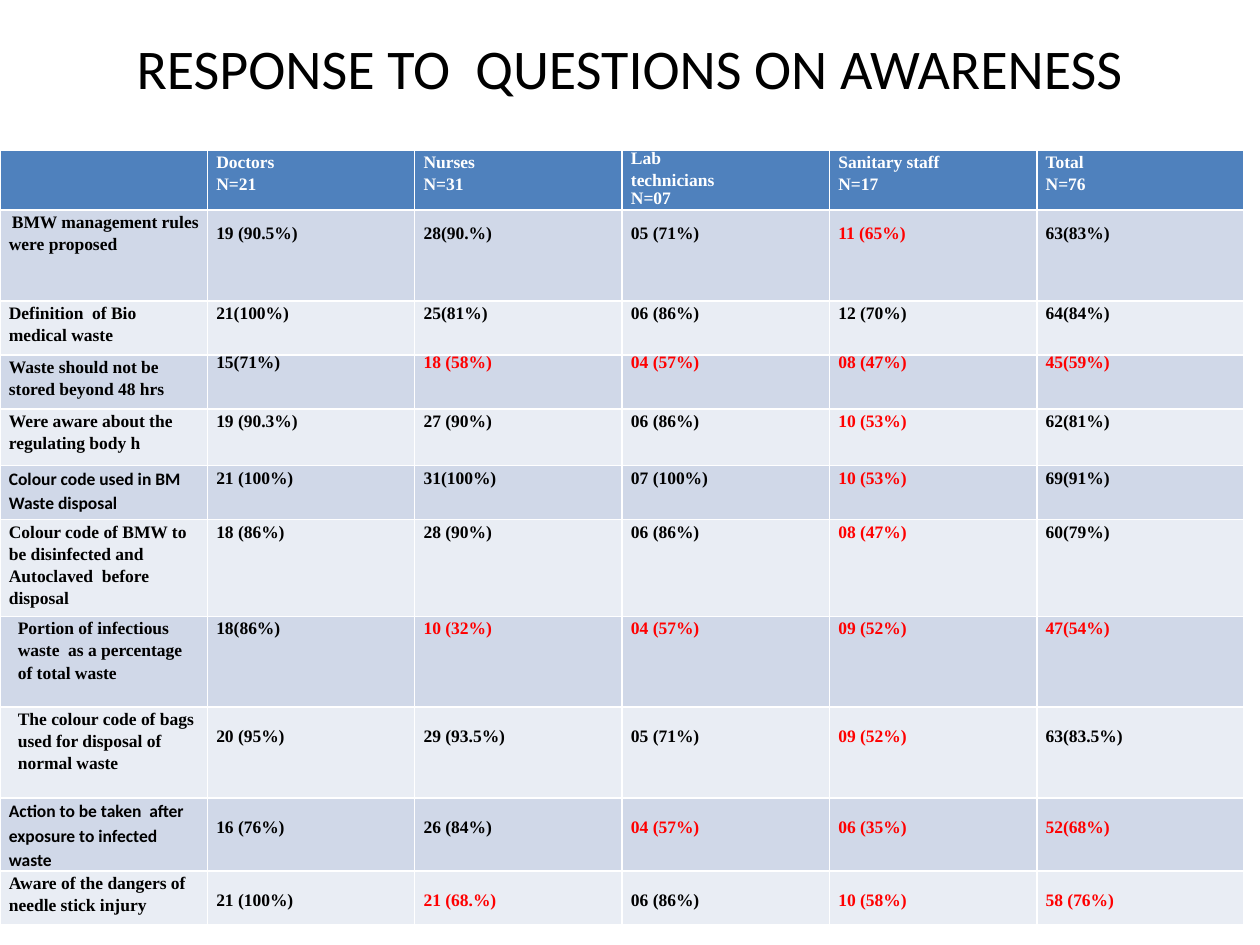
"""Build the slide with the table of responses to awareness questions."""
from pptx import Presentation
from pptx import util as u
from pptx.dml.color import RGBColor
from pptx.enum import text

BLACK = RGBColor(0x00, 0x00, 0x00)
WHITE = RGBColor(0xFF, 0xFF, 0xFF)
RED = RGBColor(0xFF, 0x00, 0x00)
HEADER_BLUE = RGBColor(0x4F, 0x81, 0xBD)
BANDS = [RGBColor(0xD0, 0xD8, 0xE8), RGBColor(0xE9, 0xED, 0xF4)]
SERIF, SANS = "Times New Roman", "Calibri"

HEADERS = [
    [],
    ["Doctors", "N=21"],
    ["Nurses", "N=31"],
    ["Lab", "technicians", "N=07"],
    ["Sanitary staff", "N=17"],
    ["Total", "N=76"],
]
LAB_SPACINGS = [u.Pt(10.1), 1.15, u.Pt(10.3)]

# question, answers, red columns, row height, answer top margin
ROWS = [
    ("BMW management rules were proposed",
     ["19 (90.5%)", "28(90.%)", "05 (71%)", "11 (65%)", "63(83%)"], [4], 1.83, 0.23),
    ("Definition  of Bio medical waste",
     ["21(100%)", "25(81%)", "06 (86%)", "12 (70%)", "64(84%)"], [], 1.09, 0),
    ("Waste should not be stored beyond 48 hrs",
     ["15(71%)", "18 (58%)", "04 (57%)", "08 (47%)", "45(59%)"], [2, 3, 4, 5], 1.09, 0),
    ("Were aware about the regulating body h",
     ["19 (90.3%)", "27 (90%)", "06 (86%)", "10 (53%)", "62(81%)"], [4], 1.14, 0),
    ("Colour code used in BM Waste disposal",
     ["21 (100%)", "31(100%)", "07 (100%)", "10 (53%)", "69(91%)"], [4], 1.09, 0),
    ("Colour code of BMW to be disinfected and Autoclaved  before  disposal",
     ["18 (86%)", "28 (90%)", "06 (86%)", "08 (47%)", "60(79%)"], [4], 1.83, 0),
    ("Portion of infectious waste  as a percentage of total waste",
     ["18(86%)", "10 (32%)", "04 (57%)", "09 (52%)", "47(54%)"], [2, 3, 4, 5], 1.83, 0),
    ("The colour code of bags used for disposal of normal waste",
     ["20 (95%)", "29 (93.5%)", "05 (71%)", "09 (52%)", "63(83.5%)"], [4], 1.83, 0.35),
    ("Action to be taken  after exposure to infected waste",
     ["16 (76%)", "26 (84%)", "04 (57%)", "06 (35%)", "52(68%)"], [3, 4, 5], 1.47, 0.35),
    ("Aware of the dangers of needle stick injury",
     ["21 (100%)", "21 (68.%)", "06 (86%)", "10 (58%)", "58 (76%)"], [2, 4, 5], 1.09, 0.35),
]
FIRST_LINE_ROW, TIGHT_ROW = 1, 3
SANS_ROWS, INDENTED_ROWS = [5, 9], [7, 8]


def add_span(para, words, font, size, colour, bold):
    span = para.add_run()
    span.text = words
    span.font.name = font
    span.font.size = u.Pt(size)
    span.font.bold = bold
    span.font.color.rgb = colour


def fill_cell(cell, lines, fill, colour, spacings, font=SERIF, left=0.18, top=0):
    cell.fill.solid()
    cell.fill.fore_color.rgb = fill
    cell.margin_left, cell.margin_right = u.Cm(left), u.Cm(0.18)
    cell.margin_top, cell.margin_bottom = u.Cm(top), u.Cm(0)
    frame = cell.text_frame
    for index, (line, spacing) in enumerate(zip(lines, spacings)):
        para = frame.add_paragraph() if index else frame.paragraphs[0]
        para.line_spacing = spacing
        add_span(para, line, font, 10, colour, True)


deck = Presentation()
deck.slide_width, deck.slide_height = u.Cm(25.4), u.Cm(19.05)
page = deck.slides.add_slide(deck.slide_layouts[6])

title = page.shapes.add_textbox(u.Cm(0), u.Cm(0), u.Cm(25.4), u.Cm(2.72)).text_frame
title.word_wrap = True
title.vertical_anchor = text.MSO_ANCHOR.MIDDLE
title.paragraphs[0].alignment = text.PP_ALIGN.CENTER
add_span(title.paragraphs[0], "RESPONSE TO  QUESTIONS ON AWARENESS", SANS, 32, BLACK, False)

heights = [1.14] + [row[3] for row in ROWS]
table = page.shapes.add_table(len(heights), len(HEADERS), u.Cm(0), u.Cm(3.03),
                              u.Cm(25.1), u.Cm(sum(heights))).table
for column in table.columns:
    column.width = u.Cm(4.18)
for table_row, height in zip(table.rows, heights):
    table_row.height = u.Cm(height)

for col, lines in enumerate(HEADERS):
    spacings = LAB_SPACINGS if len(lines) == 3 else [1.15, 1.15]
    fill_cell(table.cell(0, col), lines, HEADER_BLUE, WHITE, spacings)

for number, (question, answers, reds, height, top) in enumerate(ROWS, start=1):
    band = BANDS[(number - 1) % 2]
    fill_cell(table.cell(number, 0), [question], band, BLACK, [1.15],
              font=SANS if number in SANS_ROWS else SERIF,
              left=0.36 if number in INDENTED_ROWS else 0.18)
    spacing = u.Pt(10.1) if number == TIGHT_ROW else 1.15
    for col, answer in enumerate(answers, start=1):
        fill_cell(table.cell(number, col), [answer], band,
                  RED if col in reds else BLACK, [spacing], top=top)

first_question = table.cell(FIRST_LINE_ROW, 0).text_frame.paragraphs[0]
first_question._p.get_or_add_pPr().set("indent", str(u.Cm(0.06)))

deck.save("out.pptx")
